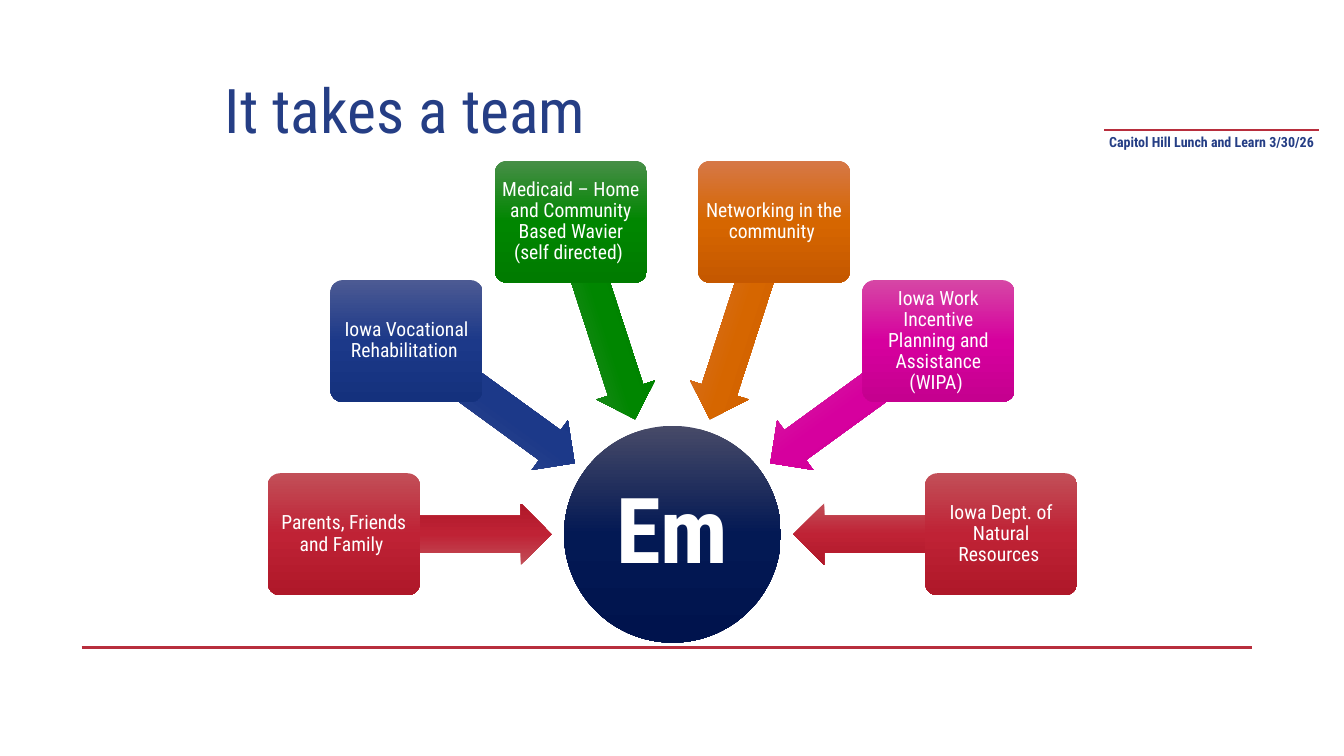
"""Build a slide showing the team around Em."""
from copy import deepcopy
from math import cos, radians, sin

from lxml.etree import SubElement
from pptx import Presentation
from pptx.dml.color import RGBColor
from pptx.enum.shapes import MSO_CONNECTOR, MSO_SHAPE
from pptx.enum.text import MSO_ANCHOR, MSO_AUTO_SIZE, PP_ALIGN
from pptx.oxml.ns import qn
from pptx.util import Inches, Pt

FONT = "Roboto Condensed"
WHITE = RGBColor(0xFF, 0xFF, 0xFF)
BLUE = RGBColor(0x25, 0x3E, 0x85)
CRIMSON = RGBColor(0xB8, 0x2E, 0x3D)


def shades(*codes):
    return [RGBColor.from_string(code) for code in codes]


NAVY = shades("474A68", "031954", "00134D")
RED = shades("C24F58", "BF2235", "AF1829")
INDIGO = shades("4C5A93", "1C3989", "14317D")
GREEN = shades("478E47", "008600", "007B00")
ORANGE = shades("D67847", "D66600", "C55800")
PINK = shades("D647A5", "D6009E", "C5008F")

TEAM = [
    ("Parents, Friends and Family ", RED),
    ("Iowa Vocational Rehabilitation ", INDIGO),
    ("Medicaid – Home and Community Based Wavier (self directed) ", GREEN),
    ("Networking in the community ", ORANGE),
    ("Iowa Work Incentive Planning and Assistance (WIPA) ", PINK),
    ("Iowa Dept. of Natural Resources ", RED),
]
HUB_X, HUB_Y, HUB_SIZE = 6.67, 5.3, 2.15
BOX_REACH, ARROW_REACH = 3.26, 2.23
STEP = 180 / (len(TEAM) - 1)


class Deck:
    """Hold the style and the current slide."""

    def __init__(self):
        self.show = Presentation()
        self.show.slide_width = Inches(13.33)
        self.show.slide_height = Inches(7.5)
        self.slide = self.show.slides.add_slide(self.show.slide_layouts[5])

    def letter(self, shape, text, size, color, bold=False, align=PP_ALIGN.CENTER,
               pad=(0.1, 0.05), anchor=MSO_ANCHOR.MIDDLE, lead=0.9):
        frame = shape.text_frame
        frame.text = text
        frame.word_wrap = True
        frame.auto_size = MSO_AUTO_SIZE.NONE
        frame.vertical_anchor = anchor
        frame.margin_left = frame.margin_right = Inches(pad[0])
        frame.margin_top = frame.margin_bottom = Inches(pad[1])
        line = frame.paragraphs[0]
        line.alignment = align
        line.line_spacing = lead
        line.font.name = FONT
        line.font.size = Pt(size)
        line.font.bold = bold
        line.font.color.rgb = color

    def title(self, text):
        shape = self.slide.shapes.title
        shape.left, shape.top = Inches(2.13), Inches(0.4)
        shape.width, shape.height = Inches(10.29), Inches(1.45)
        self.letter(shape, text, 44, BLUE, align=PP_ALIGN.LEFT)

    def label(self, text, x, y, w, h):
        box = self.slide.shapes.add_textbox(
            Inches(x), Inches(y), Inches(w), Inches(h))
        self.letter(box, text, 10, BLUE, bold=True, pad=(0.1, 0.1),
                    anchor=MSO_ANCHOR.TOP, lead=1.0)

    def rule(self, left, right, y, width):
        line = self.slide.shapes.add_connector(
            MSO_CONNECTOR.STRAIGHT, Inches(left), Inches(y), Inches(right), Inches(y))
        line.line.color.rgb = CRIMSON
        line.line.width = Pt(width)
        SubElement(line.element.spPr, qn("a:effectLst"))

    def shape(self, kind, x, y, w, h, colors, adjust=()):
        shape = self.slide.shapes.add_shape(
            kind, Inches(x - w / 2), Inches(y - h / 2), Inches(w), Inches(h))
        for index, value in enumerate(adjust):
            shape.adjustments[index] = value
        shape.shadow.inherit = False
        shape.line.fill.background()
        shape.fill.gradient()
        shape.fill.gradient_angle = 270
        stops = shape.element.spPr.find(".//" + qn("a:gsLst"))
        stops.append(deepcopy(stops[-1]))
        for stop, color, place in zip(shape.fill.gradient_stops, colors, (0, 0.5, 1)):
            stop.color.rgb = color
            stop.position = place
        return shape

    def hub(self, text):
        disc = self.shape(MSO_SHAPE.OVAL, HUB_X, HUB_Y, HUB_SIZE, HUB_SIZE, NAVY)
        self.letter(disc, text, 65, WHITE, bold=True, pad=(0.05, 0.05))

    def member(self, text, colors, angle):
        dx, dy = cos(radians(angle)), sin(radians(angle))
        arrow = self.shape(
            MSO_SHAPE.LEFT_ARROW, HUB_X + ARROW_REACH * dx, HUB_Y + ARROW_REACH * dy,
            2.06, 0.61, colors, (0.6, 0.5))
        arrow.rotation = angle % 360
        box = self.shape(
            MSO_SHAPE.ROUNDED_RECTANGLE, HUB_X + BOX_REACH * dx,
            HUB_Y + BOX_REACH * dy, 1.51, 1.21, colors, (0.1,))
        self.letter(box, text, 14, WHITE, pad=(0.03, 0.03))


def main():
    deck = Deck()
    deck.rule(0.81, 12.42, 6.42, 2.25)
    deck.label("Capitol Hill Lunch and Learn 3/30/26", 10.89, 1.22, 2.25, 0.46)
    deck.rule(10.95, 13.08, 1.29, 0.75)
    deck.title("It takes a team")
    deck.hub("Em")
    for index, (name, colors) in enumerate(TEAM):
        deck.member(name, colors, 180 + STEP * index)
    deck.show.save("out.pptx")


if __name__ == "__main__":
    main()
